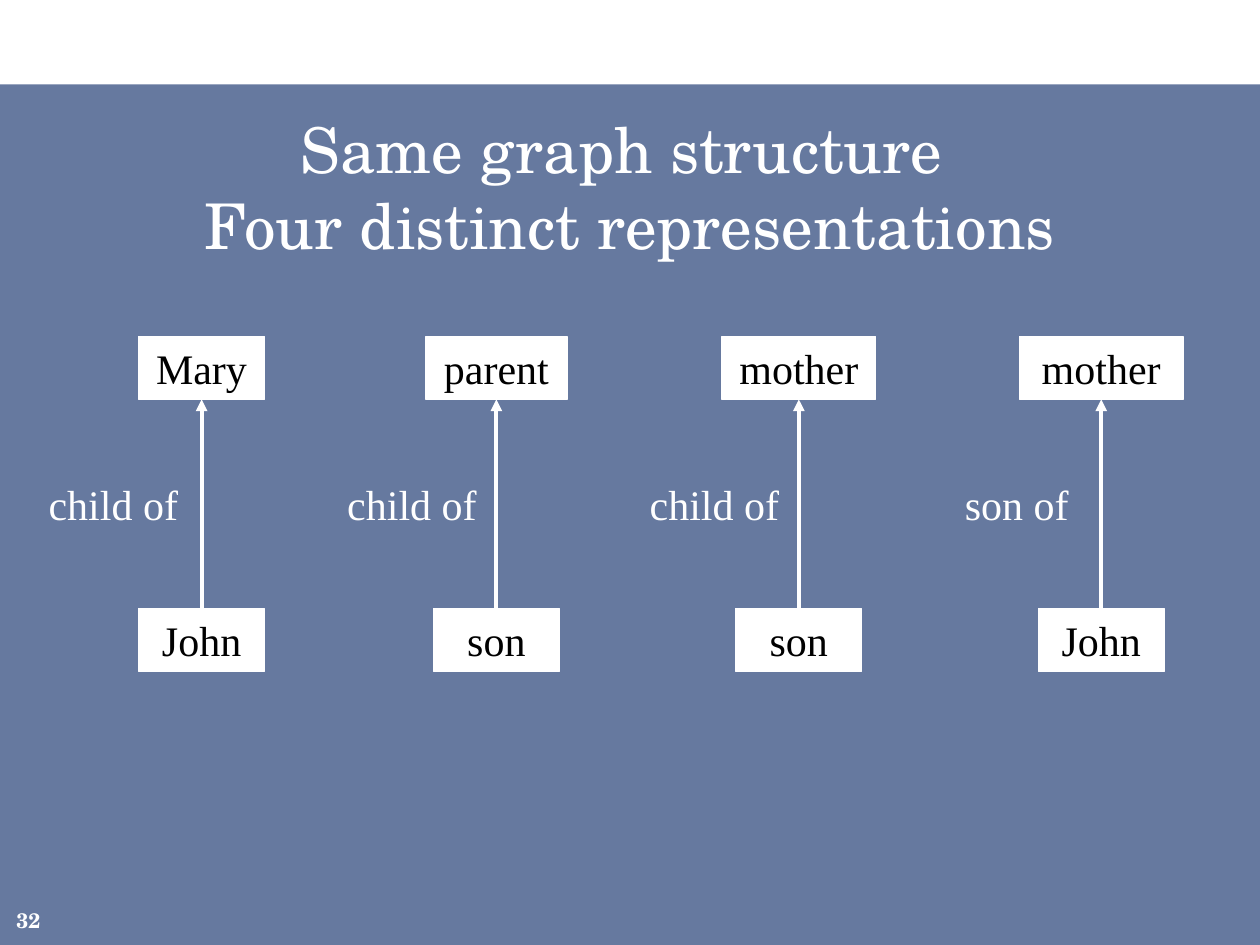
from lxml.etree import SubElement
from pptx import Presentation
from pptx.dml.color import RGBColor
from pptx.enum.shapes import MSO_CONNECTOR as Wire, MSO_SHAPE as Form
from pptx.enum.text import MSO_ANCHOR as Anchor, MSO_AUTO_SIZE as Fit, PP_ALIGN as Align
from pptx.oxml.ns import qn
from pptx.util import Inches, Pt

HUES = {"navy": "002060", "white": "FFFFFF", "black": "000000"}
SERIF, SCHOOL = "Times New Roman", "TeX Gyre Schola"
WIDE, HIGH = 10, 7.5

# Centre of the column, gap to its label, upper node and width, label, lower node
GRAPHS = [
    (1.6, 0.05, "Mary", 1, "child of", "John"),
    (3.94, 0.02, "parent", 1.12, "child of", "son"),
    (6.34, 0.02, "mother", 1.22, "child of", "son"),
    (8.74, 0.02, "mother", 1.3, "son of", "John"),
]


def hue(name):
    return RGBColor.from_string(HUES[name])


def inch(*sizes):
    return [Inches(size) for size in sizes]


def write(shape, lines, size, face, tint, align=Align.CENTER, anchor=Anchor.TOP, bold=False):
    """Fill a shape with one paragraph whose lines are parted by breaks."""
    frame = shape.text_frame
    frame.word_wrap = True
    frame.auto_size = Fit.NONE
    frame.vertical_anchor = anchor
    par = frame.paragraphs[0]
    par.alignment = align
    for i, line in enumerate(lines):
        if i:
            par.add_line_break()
        run = par.add_run()
        run.text = line
        font = run.font
        font.size, font.name, font.bold = Pt(size), face, bold
        font.color.rgb = hue(tint)


def add_panel(slide, top):
    """Lay the translucent panel from top down to the foot of the slide."""
    panel = slide.shapes.add_shape(Form.RECTANGLE, *inch(0, top, WIDE, HIGH - top))
    panel.shadow.inherit = False
    panel.fill.solid()
    panel.fill.fore_color.rgb = hue("navy")
    panel.line.fill.background()
    tint = panel.fill._xPr.find(".//" + qn("a:srgbClr"))
    SubElement(tint, qn("a:alpha"), val="60000")
    tree = slide.shapes._spTree
    tree.remove(panel._element)
    tree.insert(2, panel._element)


def add_title(slide, left, top, width, height):
    title = slide.shapes.title
    title.left, title.top, title.width, title.height = inch(left, top, width, height)
    write(title, ["Same graph structure ", "Four distinct representations"],
          36, SCHOOL, "white")


def add_number(slide, left, top, width, height):
    box = slide.shapes.add_textbox(*inch(left, top, width, height))
    write(box, ["32"], 12, SCHOOL, "white", Align.RIGHT, Anchor.MIDDLE, True)


def add_node(group, word, mid, top, width, height):
    node = group.shapes.add_shape(Form.RECTANGLE, *inch(mid - width / 2, top, width, height))
    node.shadow.inherit = False
    node.fill.solid()
    node.fill.fore_color.rgb = hue("white")
    node.line.color.rgb = hue("white")
    node.line.width = Pt(0.75)
    write(node, [word], 24, SERIF, "black")


def add_arrow(group, mid, start, end):
    arrow = group.shapes.add_connector(Wire.STRAIGHT, *inch(mid, start, mid, end))
    arrow.line.color.rgb = hue("white")
    arrow.line.width = Pt(2.25)
    SubElement(arrow.line._get_or_add_ln(), qn("a:tailEnd"), type="triangle")
    SubElement(arrow._element.spPr, qn("a:effectLst"))


def add_graph(slide, graph, top, height):
    """Draw one two-node graph between top and top + height."""
    mid, gap, upper, width, label, lower = graph
    node, wide = 0.5, 1.3
    foot = top + height - node
    group = slide.shapes.add_group_shape()
    add_node(group, lower, mid, foot, 1, node)
    add_node(group, upper, mid, top, width, node)
    add_arrow(group, mid, foot, top + node)
    box = group.shapes.add_textbox(*inch(mid - gap - wide, top + 1.08, wide, node))
    write(box, [label], 24, SERIF, "white")


def main():
    deck = Presentation()
    deck.slide_width, deck.slide_height = inch(WIDE, HIGH)
    slide = deck.slides.add_slide(deck.slide_layouts[5])
    add_panel(slide, 0.67)
    add_title(slide, 0.25, 0.83, 9.5, 0.83)
    add_number(slide, -0.08, 7.1, 0.5, 0.4)
    for graph in GRAPHS:
        add_graph(slide, graph, 2.67, 2.66)
    deck.save("out.pptx")


if __name__ == "__main__":
    main()
